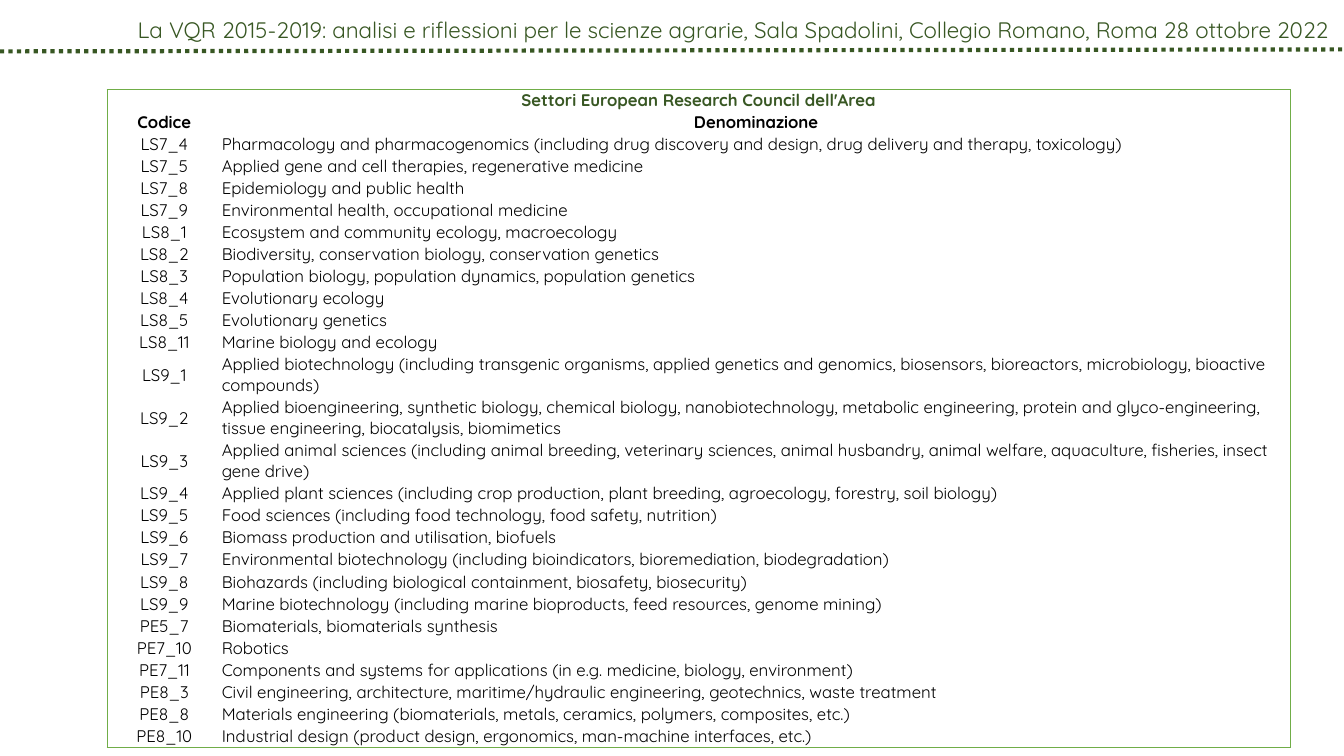
from dataclasses import dataclass

from lxml.etree import SubElement
from pptx import Presentation
from pptx.dml.color import RGBColor
from pptx.enum.dml import MSO_LINE
from pptx.enum.shapes import MSO_CONNECTOR
from pptx.enum.text import MSO_ANCHOR, MSO_AUTO_SIZE, PP_ALIGN
from pptx.oxml.ns import qn
from pptx.util import Inches, Pt


@dataclass(frozen=True)
class Theme:
    font: str = "Quicksand"
    heading: str = "385723"
    border: str = "70AD47"
    body: str = "000000"
    title_size: int = 16
    table_size: int = 12
    rule_width: int = 3
    border_width: float = 0.5


theme = Theme()

SECTORS = [
    ("LS7_4", "Pharmacology and pharmacogenomics (including drug discovery and design, drug delivery and therapy, toxicology)"),
    ("LS7_5", "Applied gene and cell therapies, regenerative medicine"),
    ("LS7_8", "Epidemiology and public health"),
    ("LS7_9", "Environmental health, occupational medicine"),
    ("LS8_1", "Ecosystem and community ecology, macroecology"),
    ("LS8_2", "Biodiversity, conservation biology, conservation genetics"),
    ("LS8_3", "Population biology, population dynamics, population genetics"),
    ("LS8_4", "Evolutionary ecology"),
    ("LS8_5", "Evolutionary genetics"),
    ("LS8_11", "Marine biology and ecology"),
    ("LS9_1", "Applied biotechnology (including transgenic organisms, applied genetics and genomics, biosensors, bioreactors, microbiology, bioactive compounds)"),
    ("LS9_2", "Applied bioengineering, synthetic biology, chemical biology, nanobiotechnology, metabolic engineering, protein and glyco-engineering, tissue engineering, biocatalysis, biomimetics"),
    ("LS9_3", "Applied animal sciences (including animal breeding, veterinary sciences, animal husbandry, animal welfare, aquaculture, fisheries, insect gene drive)"),
    ("LS9_4", "Applied plant sciences (including crop production, plant breeding, agroecology, forestry, soil biology)"),
    ("LS9_5", "Food sciences (including food technology, food safety, nutrition)"),
    ("LS9_6", "Biomass production and utilisation, biofuels"),
    ("LS9_7", "Environmental biotechnology (including bioindicators, bioremediation, biodegradation)"),
    ("LS9_8", "Biohazards (including biological containment, biosafety, biosecurity)"),
    ("LS9_9", "Marine biotechnology (including marine bioproducts, feed resources, genome mining)"),
    ("PE5_7", "Biomaterials, biomaterials synthesis"),
    ("PE7_10", "Robotics"),
    ("PE7_11", "Components and systems for applications (in e.g. medicine, biology, environment)"),
    ("PE8_3", "Civil engineering, architecture, maritime/hydraulic engineering, geotechnics, waste treatment"),
    ("PE8_8", "Materials engineering (biomaterials, metals, ceramics, polymers, composites, etc.)"),
    ("PE8_10", "Industrial design (product design, ergonomics, man-machine interfaces, etc.)"),
]
ROWS = [("Settori European Research Council dell'Area", ""), ("Codice", "Denominazione")] + SECTORS
COLUMN_WIDTHS = (1.14, 10.6)
SINGLE_ROW, DOUBLE_ROW = 0.21, 0.41
TWO_LINE_LENGTH = 130


def add_span(frame, text, size, color, align, bold=False):
    para = frame.paragraphs[0]
    para.alignment = align
    span = para.add_run()
    span.text = text
    span.font.name = theme.font
    span.font.size = Pt(size)
    span.font.bold = bold
    span.font.color.rgb = RGBColor.from_string(color)


def set_border(cell, side, visible):
    line = SubElement(cell._tc.get_or_add_tcPr(), qn(f"a:ln{side}"), w=str(Pt(theme.border_width)))
    if visible:
        fill = SubElement(line, qn("a:solidFill"))
        SubElement(fill, qn("a:srgbClr"), val=theme.border)
    else:
        SubElement(line, qn("a:noFill"))


deck = Presentation()
deck.slide_width, deck.slide_height = Inches(13.33), Inches(7.5)
page = deck.slides.add_slide(deck.slide_layouts[5])

title = page.shapes.title
title.left, title.top = Inches(-0.05), Inches(0.11)
title.width, title.height = deck.slide_width, Inches(0.37)
title.text_frame.word_wrap = True
title.text_frame.auto_size = MSO_AUTO_SIZE.NONE
title.text_frame.vertical_anchor = MSO_ANCHOR.TOP
add_span(
    title.text_frame,
    "La VQR 2015-2019: analisi e riflessioni per le scienze agrarie, Sala Spadolini, Collegio Romano, Roma 28 ottobre 2022",
    theme.title_size, theme.heading, PP_ALIGN.RIGHT,
)

rule = page.shapes.add_connector(MSO_CONNECTOR.STRAIGHT, 0, Inches(0.51), deck.slide_width, Inches(0.49))
rule.line.color.rgb = RGBColor.from_string(theme.heading)
rule.line.width = Pt(theme.rule_width)
rule.line.dash_style = MSO_LINE.ROUND_DOT
SubElement(rule._element.spPr, qn("a:effectLst"))

heights = [DOUBLE_ROW if len(name) > TWO_LINE_LENGTH else SINGLE_ROW for code, name in ROWS]
table = page.shapes.add_table(
    len(ROWS), len(COLUMN_WIDTHS), Inches(1.06), Inches(0.89),
    Inches(sum(COLUMN_WIDTHS)), Inches(sum(heights)),
).table
table.first_row = False
table.horz_banding = False
for column, width in zip(table.columns, COLUMN_WIDTHS):
    column.width = Inches(width)
table.cell(0, 0).merge(table.cell(0, 1))

last_row, last_column = len(ROWS) - 1, len(COLUMN_WIDTHS) - 1
for row_index, (texts, height) in enumerate(zip(ROWS, heights)):
    table.rows[row_index].height = Inches(height)
    for column_index, text in enumerate(texts):
        cell = table.cell(row_index, column_index)
        cell.margin_left = cell.margin_right = cell.margin_top = 0
        cell.margin_bottom = Inches(0.01)
        cell.vertical_anchor = MSO_ANCHOR.MIDDLE
        set_border(cell, "L", column_index == 0)
        set_border(cell, "R", column_index == last_column or row_index == 0)
        set_border(cell, "T", row_index == 0)
        set_border(cell, "B", row_index == last_row)
        cell.fill.background()
        if text:
            is_header = row_index < 2
            centred = is_header or column_index == 0
            add_span(
                cell.text_frame, text, theme.table_size,
                theme.heading if row_index == 0 else theme.body,
                PP_ALIGN.CENTER if centred else PP_ALIGN.LEFT, is_header,
            )

deck.save("out.pptx")
